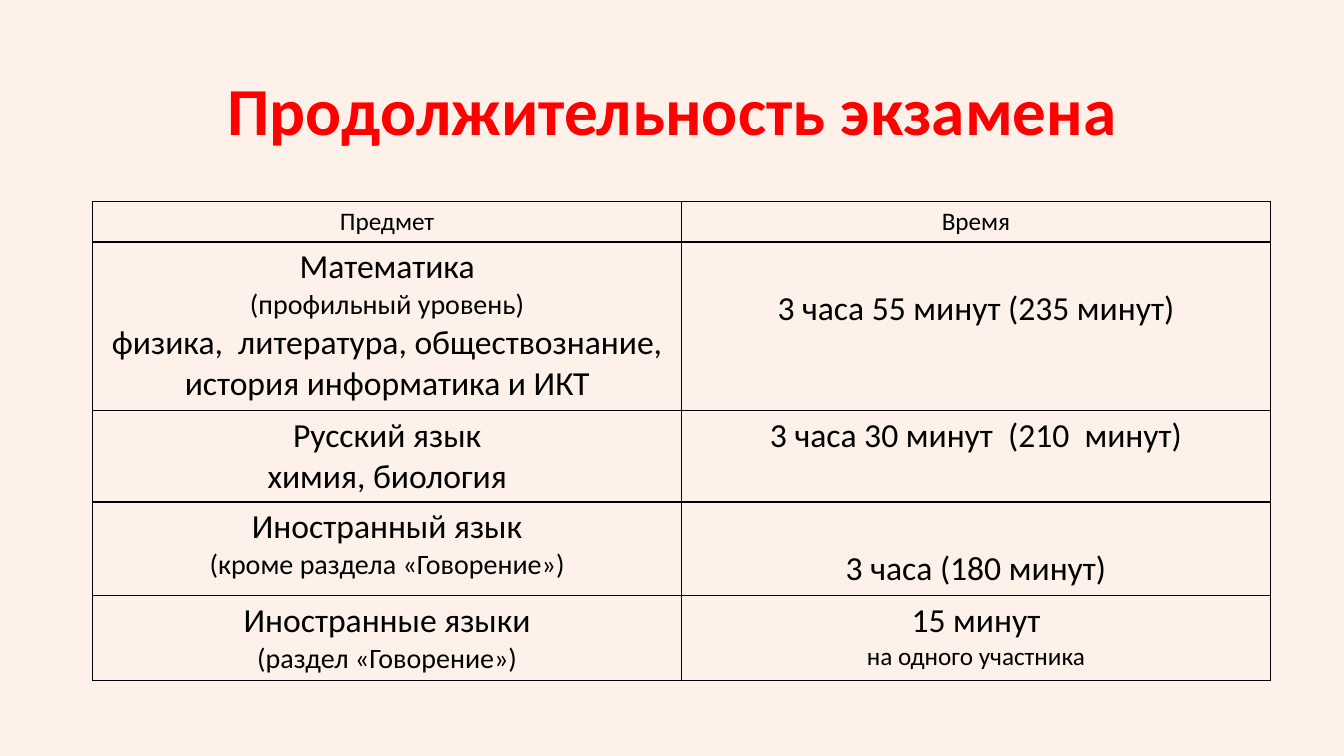
"""Build a slide with a table of exam durations."""
from pptx import Presentation
from pptx import util as u
from pptx.dml.color import RGBColor
from pptx.enum import text
from pptx.oxml import parse_xml
from pptx.oxml.ns import nsdecls

COLORS = {"background": "FDF1E9", "title": "FF0000", "text": "000000", "border": "000000"}
FONT = "Calibri"
ROW_HEIGHTS = [0.4, 1.67, 0.91, 0.93, 0.84]
LINE_DROP = 0.41

# Each cell lists its paragraphs as (wording, size).
ROWS = [
    [[("Предмет", 18)], [("Время", 18)]],
    [[("Математика", 24), ("(профильный уровень)", 20),
      ("физика,  литература, обществознание, история информатика и ИКТ", 24)],
     [("3 часа 55 минут (235 минут)", 24)]],
    [[("Русский язык", 24), ("химия, биология", 24)],
     [("3 часа 30 минут  (210  минут)", 24)]],
    [[("Иностранный язык", 24), ("(кроме раздела «Говорение»)", 20)],
     [("3 часа (180 минут)", 24)]],
    [[("Иностранные языки", 24), ("(раздел «Говорение»)", 20)],
     [("15 минут", 24), ("на одного участника", 18)]],
]
LOWERED_CELLS = {(1, 1), (3, 1)}


def add_text(p, wording, size, color, bold=False):
    p.alignment = text.PP_ALIGN.CENTER
    r = p.add_run()
    r.text = wording
    r.font.name = FONT
    r.font.size = u.Pt(size)
    r.font.bold = bold
    r.font.color.rgb = RGBColor.from_string(COLORS[color])


def add_borders(cell):
    for position, side in enumerate(("lnL", "lnR", "lnT", "lnB")):
        cell._tc.get_or_add_tcPr().insert(position, parse_xml(
            f'<a:{side} {nsdecls("a")} w="12700"><a:solidFill>'
            f'<a:srgbClr val="{COLORS["border"]}"/></a:solidFill></a:{side}>'))


prs = Presentation()
prs.slide_width = u.Inches(13.33)
prs.slide_height = u.Inches(7.5)
s = prs.slides.add_slide(prs.slide_layouts[6])
s.background.fill.solid()
s.background.fill.fore_color.rgb = RGBColor.from_string(COLORS["background"])

title = s.shapes.add_textbox(u.Inches(0.92), u.Inches(0.4), u.Inches(11.5), u.Inches(1.45))
tf = title.text_frame
tf.word_wrap = True
tf.vertical_anchor = text.MSO_ANCHOR.MIDDLE
p = tf.paragraphs[0]
p.line_spacing = 0.9
add_text(p, "Продолжительность экзамена", 48, "title", bold=True)

table = s.shapes.add_table(len(ROWS), 2, u.Inches(0.92), u.Inches(2),
                           u.Inches(11.68), u.Inches(sum(ROW_HEIGHTS))).table
table.first_row = False
table.horz_banding = False
for column in table.columns:
    column.width = u.Inches(5.84)

for i, (height, row) in enumerate(zip(ROW_HEIGHTS, ROWS)):
    table.rows[i].height = u.Inches(height)
    for j, paragraphs in enumerate(row):
        cell = table.cell(i, j)
        cell.fill.background()
        add_borders(cell)
        if (i, j) in LOWERED_CELLS:
            cell.margin_top = u.Inches(0.05 + LINE_DROP)
        tf = cell.text_frame
        for k, (wording, size) in enumerate(paragraphs):
            p = tf.add_paragraph() if k else tf.paragraphs[0]
            add_text(p, wording, size, "text")

prs.save("out.pptx")
